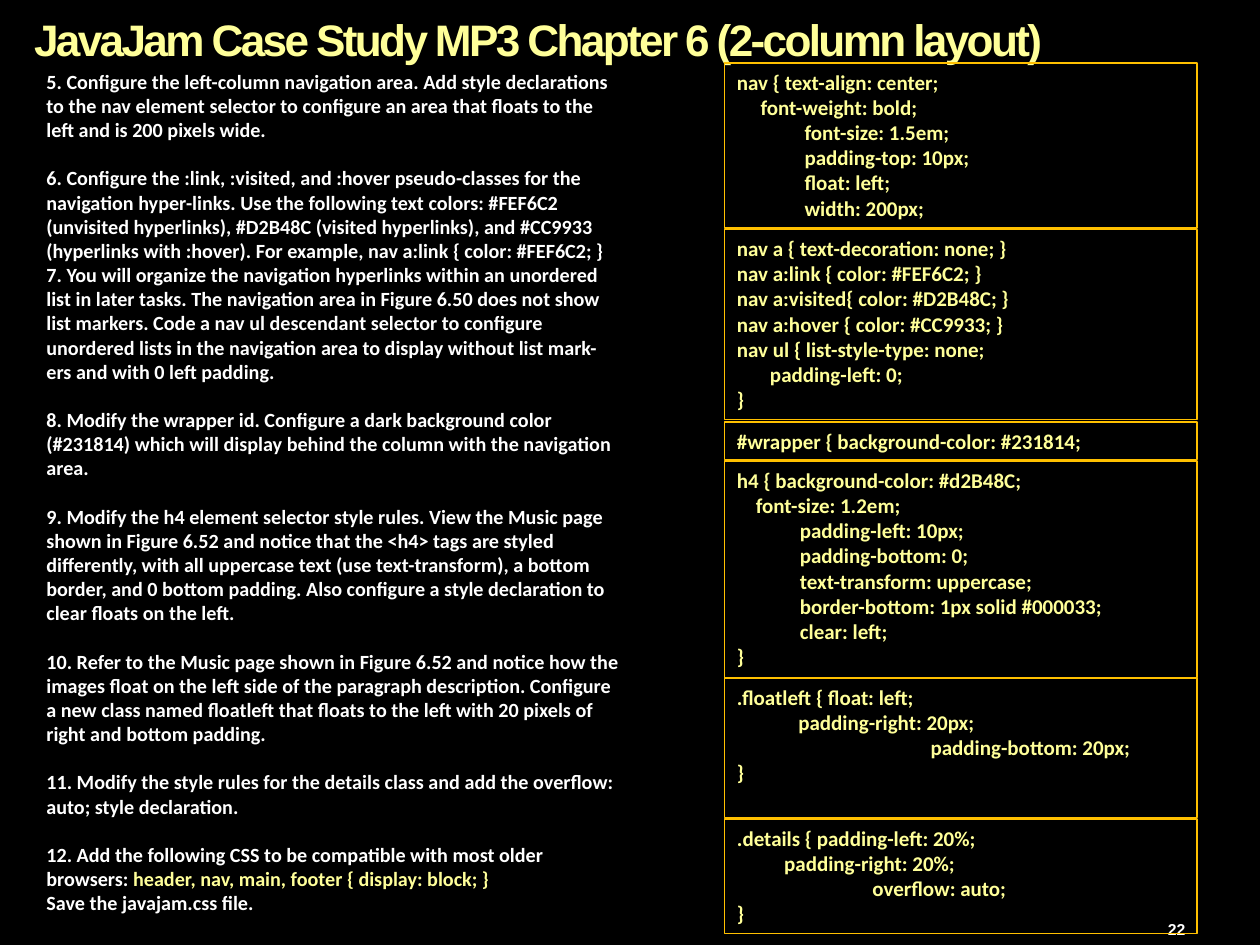
from pptx import Presentation
from pptx import util as u
from pptx.dml.color import RGBColor
from pptx.enum import shapes, text

Inches, Pt = u.Inches, u.Pt
COLORS = {"back": "000000", "body": "FFFFFF", "code": "FFFF99", "border": "FFC000"}


def style(r, size, color, name="Calibri"):
    r.font.size = Pt(size)
    r.font.name = name
    r.font.bold = True
    r.font.color.rgb = RGBColor.from_string(COLORS[color])


prs = Presentation()
prs.slide_width, prs.slide_height = Inches(10), Inches(7.5)
s = prs.slides.add_slide(prs.slide_layouts[5])
s.background.fill.solid()
s.background.fill.fore_color.rgb = RGBColor.from_string(COLORS["back"])

sp = s.shapes.add_textbox(Inches(9.17), Inches(7.1), Inches(0.66), Inches(0.4))
sp.text_frame.text = "22"
sp.text_frame.vertical_anchor = text.MSO_ANCHOR.BOTTOM
style(sp.text_frame.paragraphs[0].runs[0], 9, "body", "Arial")

sp = s.shapes.title
sp.left, sp.top, sp.width, sp.height = Inches(0.27), Inches(0.15), Inches(8.64), Inches(0.42)
tf = sp.text_frame
tf.text = "JavaJam Case Study MP3 Chapter 6 (2-column layout)"
tf.auto_size = text.MSO_AUTO_SIZE.NONE
tf.vertical_anchor = text.MSO_ANCHOR.TOP
tf.margin_left = tf.margin_top = tf.margin_right = tf.margin_bottom = 0
p = tf.paragraphs[0]
p.alignment = text.PP_ALIGN.LEFT
p.line_spacing = 0.9
style(p.runs[0], 25.2, "code", "Arial")
p.runs[0].font._element.set("spc", "-150")

steps = [
    (False, "5. Configure the left-column navigation area. Add style declarations to the nav element selector to configure an area that floats to the left and is 200 pixels wide."),
    (True, "6. Configure the :link, :visited, and :hover pseudo-classes for the navigation hyper-links. Use the following text colors: #FEF6C2 (unvisited hyperlinks), #D2B48C (visited hyperlinks), and #CC9933 (hyperlinks with :hover). For example, nav a:link { color: #FEF6C2; }"),
    (False, "7. You will organize the navigation hyperlinks within an unordered list in later tasks. The navigation area in Figure 6.50 does not show list markers. Code a nav ul descendant selector to configure unordered lists in the navigation area to display without list mark- ers and with 0 left padding."),
    (True, "8. Modify the wrapper id. Configure a dark background color (#231814) which will display behind the column with the navigation area."),
    (True, "9. Modify the h4 element selector style rules. View the Music page shown in Figure 6.52 and notice that the <h4> tags are styled differently, with all uppercase text (use text-transform), a bottom border, and 0 bottom padding. Also configure a style declaration to clear floats on the left."),
    (True, "10. Refer to the Music page shown in Figure 6.52 and notice how the images float on the left side of the paragraph description. Configure a new class named floatleft that floats to the left with 20 pixels of right and bottom padding."),
    (True, "11. Modify the style rules for the details class and add the overflow: auto; style declaration."),
    (True, "12. Add the following CSS to be compatible with most older browsers: "),
    (False, "Save the javajam.css file."),
]
sp = s.shapes.add_textbox(Inches(0.27), Inches(0.5), Inches(4.74), Inches(6.87))
tf = sp.text_frame
tf.word_wrap = True
for i, (gap, line) in enumerate(steps):
    p = tf.add_paragraph() if i else tf.paragraphs[0]
    if gap:
        p.space_before = Pt(13.8)
    r = p.add_run()
    r.text = line
    style(r, 11.5, "body")
    if line.startswith("12."):
        r = p.add_run()
        r.text = "header, nav, main, footer { display: block; }"
        style(r, 11.5, "code")

rules = [
    (0.5, 1.31, """nav { text-align: center;
     font-weight: bold;
\t font-size: 1.5em;
\t padding-top: 10px;
\t float: left;
\t width: 200px;"""),
    (1.82, 1.51, """nav a { text-decoration: none; }
nav a:link { color: #FEF6C2; }
nav a:visited{ color: #D2B48C; }
nav a:hover { color: #CC9933; }
nav ul { list-style-type: none;
       padding-left: 0;
}"""),
    (3.35, 0.3, "#wrapper { background-color: #231814;"),
    (3.66, 1.72, """h4 { background-color: #d2B48C;
    font-size: 1.2em;
\tpadding-left: 10px;
\tpadding-bottom: 0;
\ttext-transform: uppercase;
\tborder-bottom: 1px solid #000033;
\tclear: left;
}"""),
    (5.38, 1.11, """.floatleft { float: left;
             padding-right: 20px;
\t\t\t padding-bottom: 20px;
}"""),
    (6.5, 0.91, """.details { padding-left: 20%;
          padding-right: 20%;
\t\t  overflow: auto;
}"""),
]
for top, height, code in rules:
    sp = s.shapes.add_shape(shapes.MSO_SHAPE.RECTANGLE, Inches(5.75), Inches(top), Inches(3.75), Inches(height))
    sp.shadow.inherit = False
    sp.fill.background()
    sp.line.color.rgb = RGBColor.from_string(COLORS["border"])
    sp.line.width = Pt(0.75)
    tf = sp.text_frame
    tf.word_wrap = True
    tf.vertical_anchor = text.MSO_ANCHOR.TOP
    tf.text = code
    for p in tf.paragraphs:
        p.alignment = text.PP_ALIGN.LEFT
        style(p.runs[0], 12, "code")

prs.save("out.pptx")
